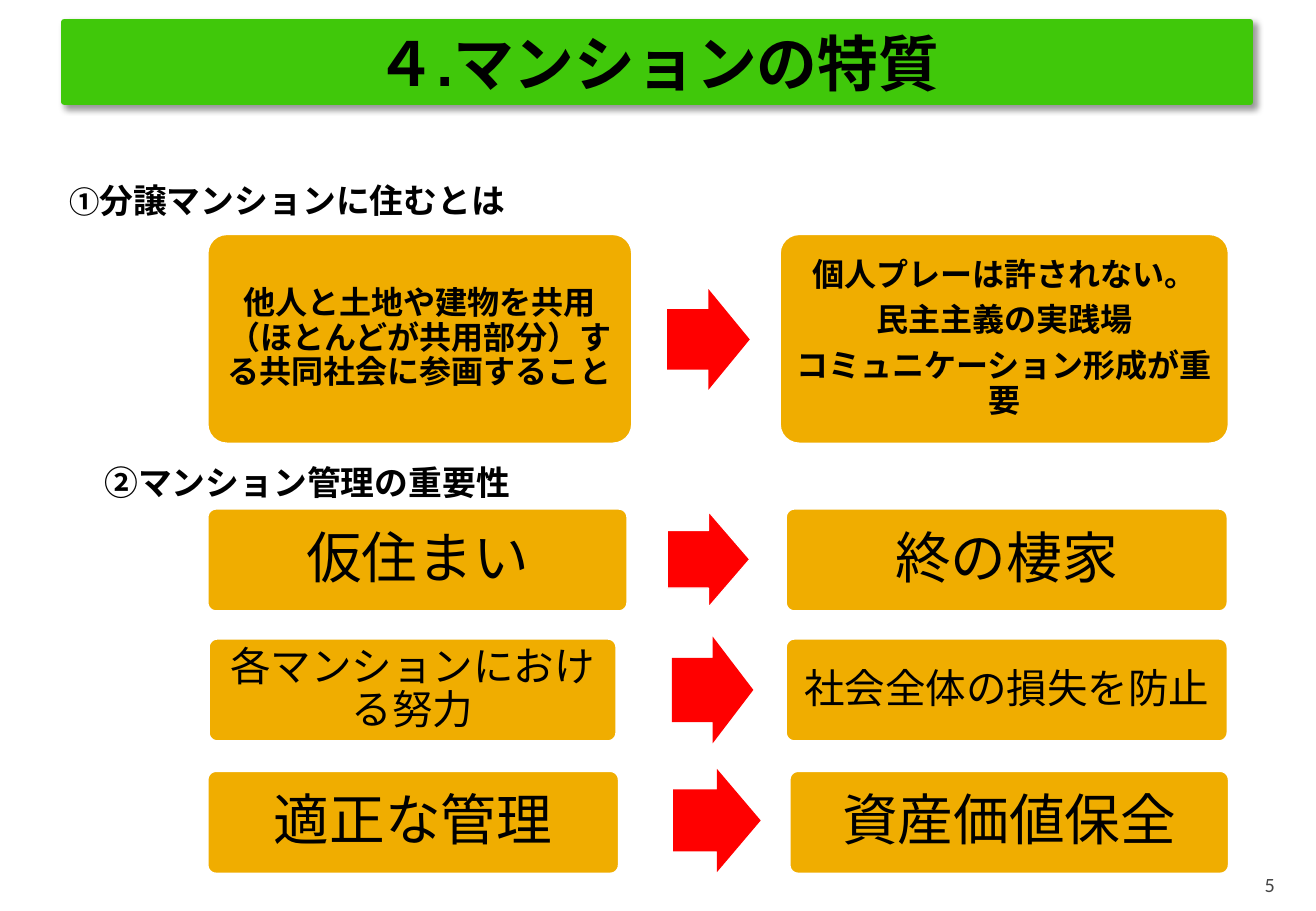
"""Builds the slide on the special qualities of condominium living."""
from lxml import etree
from pptx import Presentation
from pptx.dml.color import RGBColor
from pptx.enum.lang import MSO_LANGUAGE_ID
from pptx.enum.shapes import MSO_SHAPE
from pptx.enum.text import MSO_ANCHOR, PP_ALIGN
from pptx.oxml import parse_xml
from pptx.util import Pt

RECT, ROUND, ARROW = MSO_SHAPE.RECTANGLE, MSO_SHAPE.ROUNDED_RECTANGLE, MSO_SHAPE.RIGHT_ARROW
LEFT, CENTER, RIGHT = PP_ALIGN.LEFT, PP_ALIGN.CENTER, PP_ALIGN.RIGHT
MIDDLE, BOTTOM = MSO_ANCHOR.MIDDLE, MSO_ANCHOR.BOTTOM
JAPANESE = MSO_LANGUAGE_ID.JAPANESE
PX = 9144

THEME = {
    "green": "40C80A", "amber": "F0AD00", "red": "FF0000",
    "white": "FFFFFF", "black": "000000", "grey": "454545",
    "title": 36, "head": 20, "mark": 18, "detail": 19, "large": 33, "medium": 24, "page": 12,
    "border": 3.78, "hairline": 0.75,
    "body_font": "Calibri", "title_font": "Arial",
}
SHADOW = (
    '<a:effectLst xmlns:a="http://schemas.openxmlformats.org/drawingml/2006/main">'
    '<a:outerShdw blurRad="50800" dist="38100" dir="2700000" algn="tl" rotWithShape="0">'
    '<a:srgbClr val="000000"><a:alpha val="40000"/></a:srgbClr>'
    '</a:outerShdw></a:effectLst>'
)


def add_block(kind, box, fill, line=None, width=THEME["border"]):
    sp = s.shapes.add_shape(kind, *[v * PX for v in box])
    sp.shadow.inherit = False
    sp.fill.solid()
    sp.fill.fore_color.rgb = RGBColor.from_string(THEME[fill])
    if line:
        sp.line.color.rgb = RGBColor.from_string(THEME[line])
        sp.line.width = Pt(width)
    else:
        sp.line.fill.background()
    return sp


def write(sp, paragraphs, font="body_font", color="black", bold=False, align=LEFT,
          anchor=MIDDLE, insets=(10, 5, 10, 5), spacing=None, after=0):
    tf = sp.text_frame
    tf.word_wrap = True
    tf.vertical_anchor = anchor
    tf.margin_left, tf.margin_top, tf.margin_right, tf.margin_bottom = [v * PX for v in insets]
    for i, runs in enumerate(paragraphs):
        p = tf.add_paragraph() if i else tf.paragraphs[0]
        p.alignment = align
        p.line_spacing = spacing
        p.space_after = Pt(after)
        for text, size in runs:
            r = p.add_run()
            r.text = text
            r.font.name = THEME[font]
            r.font.size = Pt(THEME[size])
            r.font.bold = bold
            r.font.color.rgb = RGBColor.from_string(THEME[color])
            r.font.language_id = JAPANESE


prs = Presentation()
prs.slide_width, prs.slide_height = 1083 * PX, 750 * PX
s = prs.slides.add_slide(prs.slide_layouts[6])

title = add_block(RECT, (53, 18, 976, 66), "green", "green")
effects = title._element.spPr.find("{*}effectLst")
effects.getparent().replace(effects, parse_xml(SHADOW))
write(title, [[("４.マンションの特質", "title")]], font="title_font", bold=True, align=CENTER)

headings = [
    ((47, 145, 600, 40), [("①", "mark"), ("分譲マンションに住むとは", "head")]),
    ((76, 377, 600, 40), [("②", "head"), ("マンション管理の重要性", "head")]),
]
for box, runs in headings:
    write(s.shapes.add_textbox(*[v * PX for v in box]), [runs], bold=True)

rows = [
    ("detail", 8, True, None,
     (169, 191, 353, 176), ["他人と土地や建物を共用（ほとんどが共用部分）する共同社会に参画すること"],
     (549, 238, 68, 83),
     (640, 191, 373, 176), ["個人プレーは許されない。", "民主主義の実践場", "コミュニケーション形成が重要"]),
    ("large", 14, False, "white",
     (169, 417, 349, 88), ["仮住まい"],
     (549, 421, 68, 79),
     (645, 417, 367, 88), ["終の棲家"]),
    ("medium", 10, False, None,
     (170, 524, 339, 88), ["各マンションにおける努力"],
     (553, 524, 67, 88),
     (645, 524, 367, 88), ["社会全体の損失を防止"]),
    ("large", 14, False, None,
     (169, 633, 342, 88), ["適正な管理"],
     (554, 633, 72, 85),
     (648, 633, 365, 88), ["資産価値保全"]),
]
for size, inset, bold, edge, cause_box, cause, arrow_box, effect_box, effect in rows:
    for box, lines in ((cause_box, cause), (effect_box, effect)):
        card = add_block(ROUND, box, "amber", "white")
        card.adjustments[0] = 0.1
        write(card, [[(line, size)] for line in lines], bold=bold, align=CENTER,
              insets=(inset,) * 4, spacing=0.9, after=THEME[size] * 0.35)
    arrow = add_block(ARROW, arrow_box, "red", edge, THEME["hairline"])
    arrow.adjustments[0], arrow.adjustments[1] = 0.6, 0.5

page = s.shapes.add_textbox(*[v * PX for v in (972, 708, 87, 30)])
write(page, [[("5", "page")]], color="grey", align=RIGHT, anchor=BOTTOM, insets=(10, 5, 10, 0))

prs.save("out.pptx")
